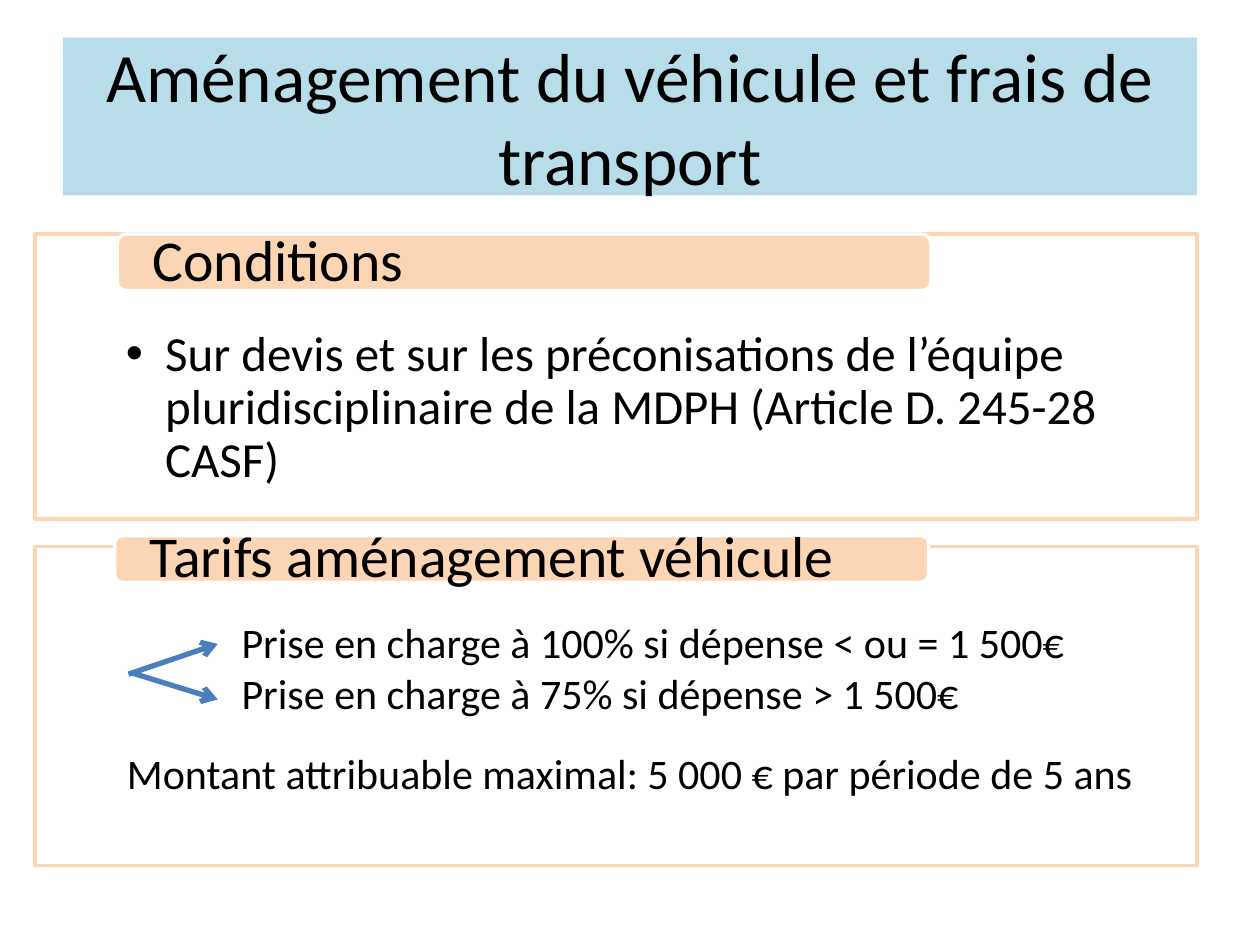
from dataclasses import dataclass

from lxml.etree import SubElement
from pptx import Presentation
from pptx.dml.color import RGBColor
from pptx.enum.shapes import MSO_CONNECTOR, MSO_SHAPE
from pptx.enum.text import MSO_ANCHOR, PP_ALIGN
from pptx.oxml.ns import qn
from pptx.util import Cm, Pt

RECT, ROUND = MSO_SHAPE.RECTANGLE, MSO_SHAPE.ROUNDED_RECTANGLE
LINE = MSO_CONNECTOR.STRAIGHT
TOP, MID = MSO_ANCHOR.TOP, MSO_ANCHOR.MIDDLE
LEFT, MIDDLE = PP_ALIGN.LEFT, PP_ALIGN.CENTER


@dataclass(frozen=True)
class Theme:
    """Colours, font and type sizes of the slide."""
    font: str = "Calibri"
    ink: str = "000000"
    paper: str = "FFFFFF"
    band: str = "B7DEE8"
    peach: str = "FCD5B5"
    arrow: str = "4B7EBC"
    title: float = 39.6
    head: float = 33
    body: float = 28
    note: float = 24
    edge: float = 2
    shaft: float = 3


THEME = Theme()


def rgb(code):
    """Turn a hex code into a colour."""
    return RGBColor.from_string(code)


def write(shape, text, size, align=LEFT, anchor=TOP, pad=(0.25, 0.13, 0.25, 0.13), gap=1.0):
    """Put one styled paragraph into a shape."""
    frame = shape.text_frame
    sides = ("left", "top", "right", "bottom")
    form = {f"margin_{side}": Cm(value) for side, value in zip(sides, pad)}
    form.update(word_wrap=True, vertical_anchor=anchor)
    for name, value in form.items():
        setattr(frame, name, value)
    para = frame.paragraphs[0]
    para.text = text
    para.alignment, para.line_spacing = align, gap
    for name, value in {"name": THEME.font, "size": Pt(size)}.items():
        setattr(para.font, name, value)
    para.font.color.rgb = rgb(THEME.ink)


def add_box(slide, kind, place, fill, edge=None):
    """Draw a filled shape with an optional outline."""
    shape = slide.shapes.add_shape(kind, *map(Cm, place))
    shape.shadow.inherit = False
    shape.fill.solid()
    shape.fill.fore_color.rgb = rgb(fill)
    if edge:
        shape.line.color.rgb = rgb(edge)
        shape.line.width = Pt(THEME.edge)
    else:
        shape.line.fill.background()
    return shape


def add_panel(slide, top, height):
    """Draw a framed, slightly clear panel."""
    panel = add_box(slide, RECT, (0.71, top, 23.42, height), THEME.paper, THEME.peach)
    tint = panel.element.spPr.find(f"{qn('a:solidFill')}/{qn('a:srgbClr')}")
    SubElement(tint, qn("a:alpha"), val="90000")
    return panel


def add_tab(slide, place, text):
    """Draw a rounded heading tab."""
    tab = add_box(slide, ROUND, place, THEME.peach, THEME.paper)
    write(tab, text, THEME.head, anchor=MID, pad=(0.66, 0, 0.66, 0), gap=0.9)


def add_bullet(shape):
    """Give the paragraph of a shape a hanging bullet."""
    props = shape.element.find(f".//{qn('a:pPr')}")
    props.set("marL", str(Cm(0.79)))
    props.set("indent", str(Cm(-0.79)))
    SubElement(props, qn("a:buFont"), typeface="Arial")
    SubElement(props, qn("a:buChar"), char="•")


def add_arrow(slide, ends):
    """Draw a straight arrow."""
    arrow = slide.shapes.add_connector(LINE, *map(Cm, ends))
    arrow.line.color.rgb = rgb(THEME.arrow)
    arrow.line.width = Pt(THEME.shaft)
    props = arrow.element.spPr
    SubElement(props.find(qn("a:ln")), qn("a:tailEnd"), type="arrow")
    SubElement(props, qn("a:effectLst"))


def add_note(slide, place, text):
    """Place a line of plain text."""
    write(slide.shapes.add_textbox(*map(Cm, place)), text, THEME.note)


def main():
    """Build and save the slide."""
    deck = Presentation()
    deck.slide_width, deck.slide_height = Cm(25.4), Cm(19.05)
    slide = deck.slides.add_slide(deck.slide_layouts[6])

    title = add_box(slide, RECT, (1.27, 0.76, 22.86, 3.18), THEME.band)
    write(title, "Aménagement du véhicule et frais de transport", THEME.title, MIDDLE, MID)

    terms = add_panel(slide, 4.72, 5.74)
    write(terms, "Sur devis et sur les préconisations de l’équipe pluridisciplinaire "
          "de la MDPH (Article D. 245-28 CASF)", THEME.body,
          pad=(1.83, 1.91, 1.83, 0.56), gap=0.9)
    add_bullet(terms)
    add_tab(slide, (2.36, 4.72, 16.41, 1.14), "Conditions")

    add_panel(slide, 11.02, 6.43)
    add_tab(slide, (2.31, 10.8, 16.41, 0.94), "Tarifs aménagement véhicule")
    for ends in ((2.59, 13.59, 4.39, 12.98), (2.64, 13.56, 4.39, 14.1)):
        add_arrow(slide, ends)
    for place, text in (
        ((4.62, 12.29, 17.68, 1.27), "Prise en charge à 100% si dépense < ou = 1 500€"),
        ((4.62, 13.33, 16.87, 1.27), "Prise en charge à 75% si dépense > 1 500€"),
        ((2.31, 14.94, 20.8, 1.27), "Montant attribuable maximal: 5 000 € par période de 5 ans"),
    ):
        add_note(slide, place, text)

    deck.save("out.pptx")


if __name__ == "__main__":
    main()
